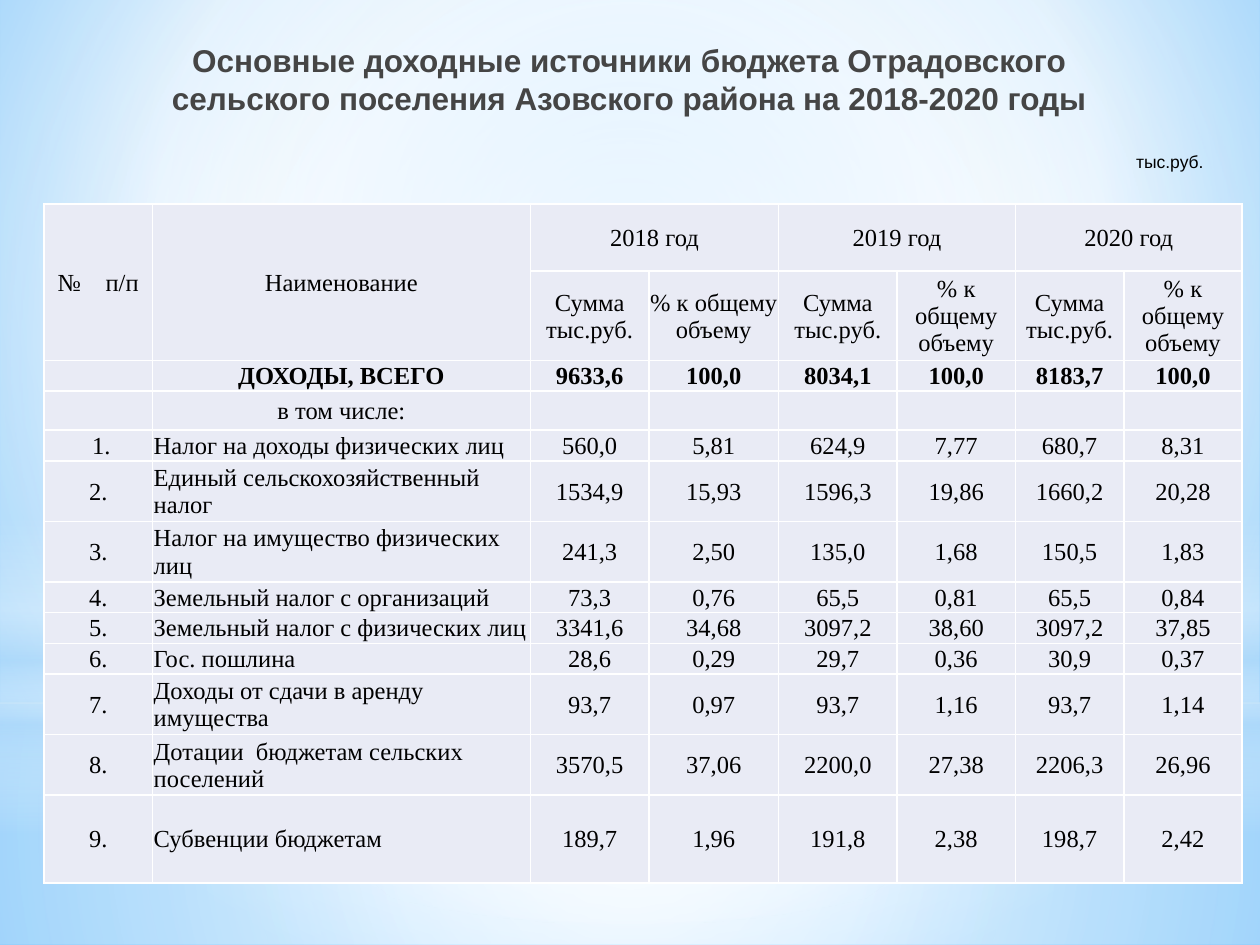
from dataclasses import dataclass
from typing import NamedTuple, Optional

from lxml import etree
from pptx import Presentation
from pptx.dml.color import RGBColor
from pptx.enum import shapes, text
from pptx.oxml import ns
from pptx.util import Inches, Pt


@dataclass(frozen=True)
class Theme:
    heading_font: str = "Arial"
    table_font: str = "Times New Roman"
    heading: str = "454545"
    ink: str = "000000"
    white: str = "FFFFFF"
    sky: str = "B4DCFA"
    cell: str = "E9EBF5"
    heading_size: int = 18
    unit_size: int = 10
    table_size: int = 14
    border_width: int = 1


THEME = Theme()


class Stop(NamedTuple):
    position: int
    color: str
    opacity: int = 100


class Glow(NamedTuple):
    """A backdrop shape; without an angle its gradient runs out from the centre."""
    kind: shapes.MSO_SHAPE
    top: float
    height: float
    stops: list[Stop]
    angle: Optional[int] = None


class Source(NamedTuple):
    number: str
    name: str
    values: str = ""
    height: float = 0.24
    bold: bool = False
    centered: bool = False


RECT, OVAL = shapes.MSO_SHAPE.RECTANGLE, shapes.MSO_SHAPE.OVAL
WHITE, SKY = THEME.white, THEME.sky
CENTER, LEFT, RIGHT = text.PP_ALIGN.CENTER, text.PP_ALIGN.LEFT, text.PP_ALIGN.RIGHT

BACKGROUND = [Stop(0, "9ED5FF"), Stop(60, WHITE), Stop(100, "5BB9FF")]
GLOWS = [
    Glow(RECT, 5.58, 1.92, [Stop(0, WHITE, 91), Stop(37, WHITE, 76), Stop(100, SKY, 79)]),
    Glow(RECT, 0, 5.58, [Stop(0, WHITE, 89), Stop(48, WHITE, 62), Stop(100, SKY, 79)]),
    Glow(RECT, 4.12, 2.5, [Stop(0, WHITE, 0), Stop(29, WHITE, 30), Stop(45, SKY, 40),
                           Stop(55, WHITE, 26), Stop(65, SKY, 60), Stop(100, WHITE, 0)], 90),
    Glow(OVAL, 1.75, 5.58, [Stop(0, WHITE), Stop(56, WHITE, 0)]),
]

YEARS = ["2018 год", "2019 год", "2020 год"]
MEASURES = ["Сумма тыс.руб.", "% к общему объему"]
COLUMN_WIDTHS = [0.86, 3, 0.94, 1.03, 0.94, 0.94, 0.86, 0.94]
HEADER_HEIGHTS = [0.53, 0.71]
SOURCES = [
    Source("", "ДОХОДЫ, ВСЕГО", "9633,6 100,0 8034,1 100,0 8183,7 100,0",
           bold=True, centered=True),
    Source("", "в том числе:", height=0.31, centered=True),
    Source(" 1.", "Налог на доходы физических лиц", "560,0 5,81 624,9 7,77 680,7 8,31"),
    Source("2.", "Единый сельскохозяйственный налог",
           "1534,9 15,93 1596,3 19,86 1660,2 20,28", 0.48),
    Source("3.", "Налог на имущество физических лиц",
           "241,3 2,50 135,0 1,68 150,5 1,83", 0.48),
    Source("4.", "Земельный налог с организаций", "73,3 0,76 65,5 0,81 65,5 0,84"),
    Source("5.", "Земельный налог с физических лиц",
           "3341,6 34,68 3097,2 38,60 3097,2 37,85"),
    Source("6.", "Гос. пошлина", "28,6 0,29 29,7 0,36 30,9 0,37"),
    Source("7.", "Доходы от сдачи в аренду имущества",
           "93,7 0,97 93,7 1,16 93,7 1,14", 0.48),
    Source("8.", "Дотации  бюджетам сельских поселений",
           "3570,5 37,06 2200,0 27,38 2206,3 26,96", 0.48),
    Source("9.", "Субвенции бюджетам", "189,7 1,96 191,8 2,38 198,7 2,42", 0.7),
]


def add_node(parent, tag: str, **attributes):
    values = {name: str(value) for name, value in attributes.items()}
    return etree.SubElement(parent, ns.qn(tag), values)


def paint_gradient(owner, stops: list[Stop], angle: Optional[int] = None,
                   focus: tuple = (50, 50, 50, 50)) -> None:
    """Swap the solid fill found inside owner for a gradient."""
    solid = next(owner.iter(ns.qn("a:solidFill")))
    gradient = etree.Element(ns.qn("a:gradFill"), rotWithShape="1")
    stop_list = add_node(gradient, "a:gsLst")
    for stop in stops:
        node = add_node(stop_list, "a:gs", pos=stop.position * 1000)
        color = add_node(node, "a:srgbClr", val=stop.color)
        if stop.opacity < 100:
            add_node(color, "a:alpha", val=stop.opacity * 1000)
    if angle is None:
        circle = add_node(gradient, "a:path", path="circle")
        sides = {side: value * 1000 for side, value in zip("ltrb", focus)}
        add_node(circle, "a:fillToRect", **sides)
    else:
        add_node(gradient, "a:lin", ang=angle * 60000, scaled=0)
    solid.getparent().replace(solid, gradient)


def draw_glow(page, glow: Glow) -> None:
    shape = page.shapes.add_shape(glow.kind, 0, Inches(glow.top), Inches(10),
                                  Inches(glow.height))
    shape.shadow.inherit = False
    shape.line.fill.background()
    shape.fill.solid()
    paint_gradient(shape._element.spPr, glow.stops, glow.angle)


def write(frame, content: str, *, font: str, size: int, color: str = THEME.ink,
          bold: bool = False, align: text.PP_ALIGN = CENTER) -> None:
    para = frame.paragraphs[0]
    para.alignment = align
    if not content:
        para._p.get_or_add_endParaRPr().set("sz", str(size * 100))
        return
    span = para.add_run()
    span.text = content
    span.font.name, span.font.size, span.font.bold = font, Pt(size), bold
    span.font.color.rgb = RGBColor.from_string(color)


def add_label(page, content: str, left: float, top: float, width: float,
              height: float, **style) -> None:
    box = page.shapes.add_textbox(*map(Inches, (left, top, width, height)))
    box.text_frame.word_wrap = True
    write(box.text_frame, content, font=THEME.heading_font, **style)


def style_cell(cell) -> None:
    cell.fill.solid()
    cell.fill.fore_color.rgb = RGBColor.from_string(THEME.cell)
    cell.vertical_anchor = text.MSO_ANCHOR.MIDDLE
    cell.margin_left = cell.margin_right = cell.margin_top = Inches(0.01)
    cell.margin_bottom = 0
    properties = cell._tc.get_or_add_tcPr()
    for index, side in enumerate("LRTB"):
        border = add_node(properties, f"a:ln{side}", w=Pt(THEME.border_width))
        add_node(add_node(border, "a:solidFill"), "a:srgbClr", val=THEME.white)
        properties.insert(index, border)


def fill_cell(cell, content: str, bold: bool = False,
              align: text.PP_ALIGN = CENTER) -> None:
    write(cell.text_frame, content, font=THEME.table_font, size=THEME.table_size,
          bold=bold, align=align)


def add_income_table(page) -> None:
    heights = HEADER_HEIGHTS + [source.height for source in SOURCES]
    frame = page.shapes.add_table(len(heights), len(COLUMN_WIDTHS), Inches(0.35), Inches(1.62),
                                  Inches(sum(COLUMN_WIDTHS)), Inches(sum(heights)))
    table = frame.table
    table.first_row = table.horz_banding = False
    for column, width in zip(table.columns, COLUMN_WIDTHS):
        column.width = Inches(width)
    for row, height in zip(table.rows, heights):
        row.height = Inches(height)
    for cell in table.iter_cells():
        style_cell(cell)

    for column, title in enumerate(["№    п/п", "Наименование"]):
        table.cell(0, column).merge(table.cell(1, column))
        fill_cell(table.cell(0, column), title)
    for column, year in zip(range(2, 8, 2), YEARS):
        table.cell(0, column).merge(table.cell(0, column + 1))
        fill_cell(table.cell(0, column), year)
        for offset, measure in enumerate(MEASURES):
            fill_cell(table.cell(1, column + offset), measure)

    for row, source in enumerate(SOURCES, start=len(HEADER_HEIGHTS)):
        values = source.values.split() or [""] * 6
        for column, content in enumerate([source.number, source.name, *values]):
            align = LEFT if column == 1 and not source.centered else CENTER
            fill_cell(table.cell(row, column), content, source.bold, align)


def main() -> None:
    deck = Presentation()
    deck.slide_width, deck.slide_height = Inches(10), Inches(7.5)
    page = deck.slides.add_slide(deck.slide_layouts[6])
    page.background.fill.solid()
    paint_gradient(page._element.cSld, BACKGROUND, focus=(20, 10, 20, 60))
    for glow in GLOWS:
        draw_glow(page, glow)
    add_label(page, "Основные доходные источники бюджета Отрадовского сельского поселения "
              "Азовского района на 2018-2020 годы", 1.21, 0.28, 7.57, 1.25,
              size=THEME.heading_size, color=THEME.heading, bold=True)
    add_label(page, "тыс.руб.", 7.92, 1.15, 1.73, 0.27, size=THEME.unit_size, align=RIGHT)
    add_income_table(page)
    deck.save("out.pptx")


if __name__ == "__main__":
    main()
